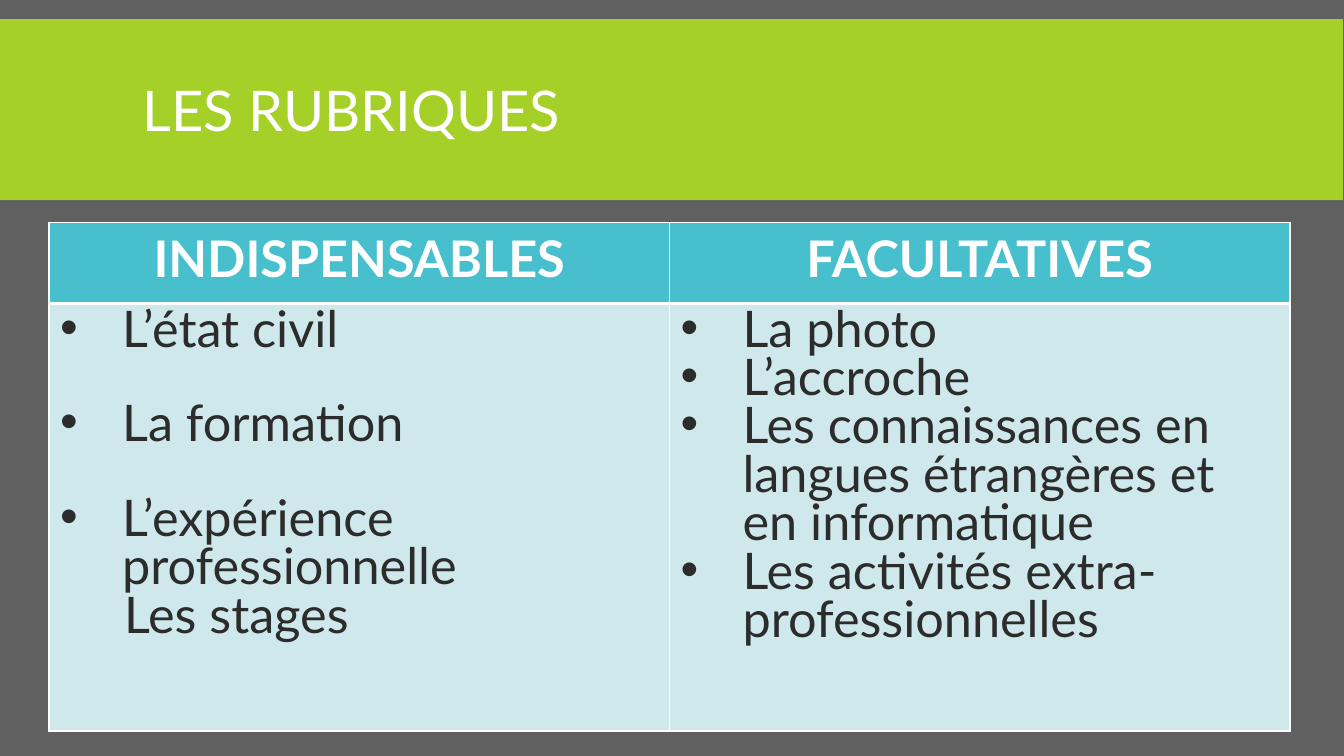
import dataclasses

import pptx
import pptx.dml.color
import pptx.enum.shapes
import pptx.enum.text
import pptx.oxml.ns
import pptx.util
from lxml import etree

PX = 9080  # EMU in one px


@dataclasses.dataclass(frozen=True)
class Theme:
    font: str = "Lato"
    background: str = "606060"
    band: str = "A5D028"
    header: str = "47BFCD"
    body: str = "CFE8EC"
    light: str = "FFFFFF"
    dark: str = "2C2C2C"
    title_size: int = 40
    table_size: int = 36
    thin: int = 1
    thick: int = 3


def rgb(color):
    return pptx.dml.color.RGBColor.from_string(color)


def add_xml(parent, tag, **attributes):
    return etree.SubElement(parent, pptx.oxml.ns.qn(tag), attributes)


class SlideBuilder:
    def __init__(self, slide, theme):
        self.slide = slide
        self.theme = theme
        self.fill(slide.background, theme.background)

    def fill(self, target, color):
        target.fill.solid()
        target.fill.fore_color.rgb = rgb(color)

    def style(self, paragraph, size, color, bold=False):
        for run in paragraph.runs:
            run.font.name = self.theme.font
            run.font.size = pptx.util.Pt(size)
            run.font.color.rgb = rgb(color)
            run.font.bold = bold

    def band(self, left, top, width, height):
        band = self.slide.shapes.add_shape(
            pptx.enum.shapes.MSO_SHAPE.RECTANGLE,
            left * PX, top * PX, width * PX, height * PX)
        band.shadow.inherit = False
        self.fill(band, self.theme.band)
        band.line.fill.background()

    def title(self, text, left, top, width, height):
        frame = self.slide.shapes.add_textbox(
            left * PX, top * PX, width * PX, height * PX).text_frame
        frame.word_wrap = True
        frame.vertical_anchor = pptx.enum.text.MSO_ANCHOR.MIDDLE
        frame.text = text
        frame.paragraphs[0].line_spacing = 0.85
        self.style(frame.paragraphs[0], self.theme.title_size, self.theme.light)

    def table(self, left, top, column_widths, row_heights):
        table = self.slide.shapes.add_table(
            len(row_heights), len(column_widths), left * PX, top * PX,
            sum(column_widths) * PX, sum(row_heights) * PX).table
        for column, width in zip(table.columns, column_widths):
            column.width = width * PX
        for row, height in zip(table.rows, row_heights):
            row.height = height * PX
        return table

    def borders(self, cell, top, bottom):
        """Draw light borders; top and bottom are widths in points."""
        thin = self.theme.thin
        properties = cell._tc.get_or_add_tcPr()
        for side, width in zip("LRTB", (thin, thin, top, bottom)):
            line = add_xml(properties, f"a:ln{side}", w=str(pptx.util.Pt(width)))
            add_xml(add_xml(line, "a:solidFill"), "a:srgbClr", val=self.theme.light)

    def header_cell(self, cell, text):
        self.borders(cell, self.theme.thin, self.theme.thick)
        self.fill(cell, self.theme.header)
        cell.text = text
        heading = cell.text_frame.paragraphs[0]
        heading.alignment = pptx.enum.text.PP_ALIGN.CENTER
        self.style(heading, self.theme.table_size, self.theme.light, bold=True)

    def list_cell(self, cell, items, gap, unbulleted=()):
        """Fill a cell with bulleted items, gap points apart."""
        self.borders(cell, self.theme.thick, self.theme.thin)
        self.fill(cell, self.theme.body)
        cell.text = "\n".join(items)
        for index, paragraph in enumerate(cell.text_frame.paragraphs):
            bulleted = paragraph.text not in unbulleted
            paragraph.line_spacing = 0.8
            if index and bulleted:
                paragraph.space_before = pptx.util.Pt(gap)
            self.indent(paragraph, bulleted)
            self.style(paragraph, self.theme.table_size, self.theme.dark)

    def indent(self, paragraph, bulleted):
        properties = paragraph._p.get_or_add_pPr()
        properties.set("marL", str((63 if bulleted else 65) * PX))
        properties.set("indent", str((-62 if bulleted else 0) * PX))
        if bulleted:
            color = add_xml(properties, "a:buClr")
            add_xml(color, "a:srgbClr", val=self.theme.dark)
            add_xml(properties, "a:buFont", typeface="Arial")
            add_xml(properties, "a:buChar", char="•")
        else:
            add_xml(properties, "a:buNone")


def main():
    presentation = pptx.Presentation()
    presentation.slide_width = 1343 * PX
    presentation.slide_height = 755 * PX
    slide = presentation.slides.add_slide(presentation.slide_layouts[6])
    builder = SlideBuilder(slide, Theme())

    builder.band(0, 19, 1342, 181)
    builder.title("LES RUBRIQUES", 133, 31, 1077, 166)

    sections = builder.table(49, 222, (620, 620), (81, 427))
    for column, heading in enumerate(("INDISPENSABLES", "FACULTATIVES")):
        builder.header_cell(sections.cell(0, column), heading)

    required = ("L’état civil", "La formation",
                "L’expérience professionnelle", "Les stages")
    optional = ("La photo", "L’accroche",
                "Les connaissances en langues étrangères et en informatique",
                "Les activités extra-professionnelles")
    builder.list_cell(sections.cell(1, 0), required, gap=33,
                      unbulleted=("Les stages",))
    builder.list_cell(sections.cell(1, 1), optional, gap=0)

    presentation.save("out.pptx")


if __name__ == "__main__":
    main()
